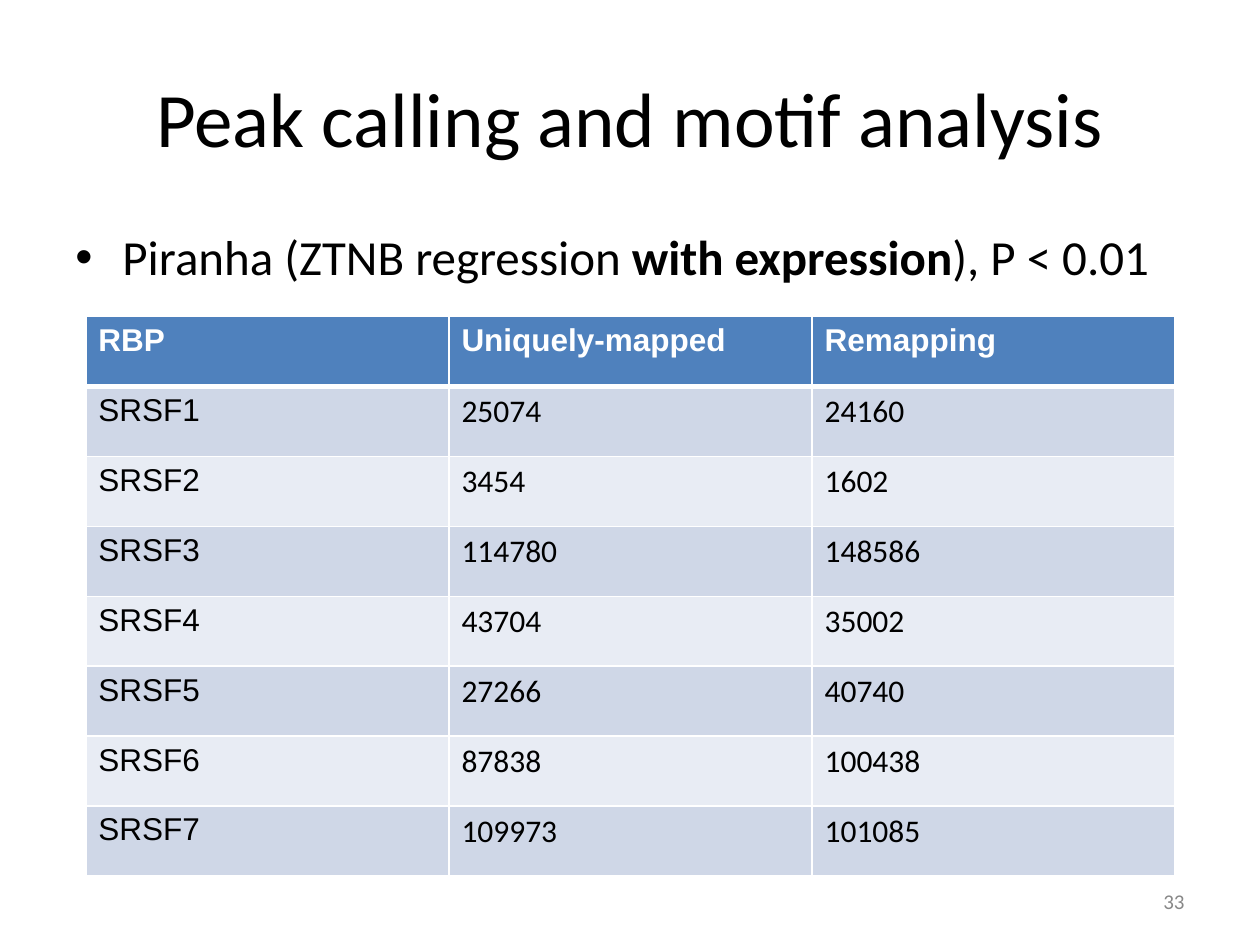
"""Build the slide on peak calling and motif analysis."""
import lxml.etree
import pptx
import pptx.dml.color
import pptx.enum.text
import pptx.oxml.ns
import pptx.util

Cm = pptx.util.Cm
RGBColor = pptx.dml.color.RGBColor
Align = pptx.enum.text.PP_ALIGN
Anchor = pptx.enum.text.MSO_ANCHOR
qn = pptx.oxml.ns.qn

BLACK = RGBColor(0x00, 0x00, 0x00)
WHITE = RGBColor(0xFF, 0xFF, 0xFF)
GREY = RGBColor(0x88, 0x88, 0x88)
HEADER_BLUE = RGBColor(0x4F, 0x81, 0xBD)
BAND_DARK = RGBColor(0xCF, 0xD7, 0xE7)
BAND_LIGHT = RGBColor(0xE8, 0xEC, 0xF4)


def add_span(para, text, size, color, font="Calibri", bold=False):
    span = para.add_run()
    span.text = text
    span.font.size = pptx.util.Pt(size)
    span.font.name = font
    span.font.bold = bold
    span.font.color.rgb = color


def add_box(page, left, top, width, height, anchor, align):
    box = page.shapes.add_textbox(Cm(left), Cm(top), Cm(width), Cm(height))
    box.text_frame.word_wrap = True
    box.text_frame.vertical_anchor = anchor
    para = box.text_frame.paragraphs[0]
    para.alignment = align
    return para


deck = pptx.Presentation()
deck.slide_width = Cm(25.4)
deck.slide_height = Cm(19.05)
page = deck.slides.add_slide(deck.slide_layouts[6])

title = add_box(page, 1.27, 0.76, 22.86, 3.18, Anchor.MIDDLE, Align.CENTER)
add_span(title, "Peak calling and motif analysis", 44, BLACK)

method = add_box(page, 1.27, 4.45, 22.86, 12.57, Anchor.TOP, Align.LEFT)
method_format = method._p.get_or_add_pPr()
method_format.set("marL", str(Cm(0.95)))
method_format.set("indent", str(-Cm(0.95)))
lxml.etree.SubElement(method_format, qn("a:buFont"), typeface="Arial")
lxml.etree.SubElement(method_format, qn("a:buChar"), char="•")
add_span(method, "Piranha (ZTNB regression ", 28, BLACK)
add_span(method, "with expression", 28, BLACK, bold=True)
add_span(method, "), P < 0.01", 28, BLACK)

peak_rows = [
    ("RBP", "Uniquely-mapped", "Remapping"),
    ("SRSF1", "25074", "24160"),
    ("SRSF2", "3454", "1602"),
    ("SRSF3", "114780", "148586"),
    ("SRSF4", "43704", "35002"),
    ("SRSF5", "27266", "40740"),
    ("SRSF6", "87838", "100438"),
    ("SRSF7", "109973", "101085"),
]
table = page.shapes.add_table(
    len(peak_rows), 3, Cm(1.73), Cm(6.38), Cm(21.96), Cm(11.28)
).table
for row_index, values in enumerate(peak_rows):
    is_header = row_index == 0
    band = BAND_DARK if row_index % 2 else BAND_LIGHT
    for column_index, value in enumerate(values):
        cell = table.cell(row_index, column_index)
        is_label = is_header or column_index == 0
        add_span(
            cell.text_frame.paragraphs[0],
            value,
            18,
            WHITE if is_header else BLACK,
            "Arial" if is_label else "Calibri",
            is_header,
        )
        cell_format = cell._tc.get_or_add_tcPr()
        for side in ("lnL", "lnR", "lnT", "lnB"):
            thick = (is_header and side == "lnB") or (row_index == 1 and side == "lnT")
            border = lxml.etree.SubElement(
                cell_format, qn(f"a:{side}"), w=str(pptx.util.Pt(3 if thick else 1))
            )
            paint = lxml.etree.SubElement(border, qn("a:solidFill"))
            lxml.etree.SubElement(paint, qn("a:srgbClr"), val=str(WHITE))
        cell.fill.solid()
        cell.fill.fore_color.rgb = HEADER_BLUE if is_header else band

number = add_box(page, 18.21, 17.65, 5.92, 1.02, Anchor.MIDDLE, Align.RIGHT)
add_span(number, "33", 12, GREY)

deck.save("out.pptx")
